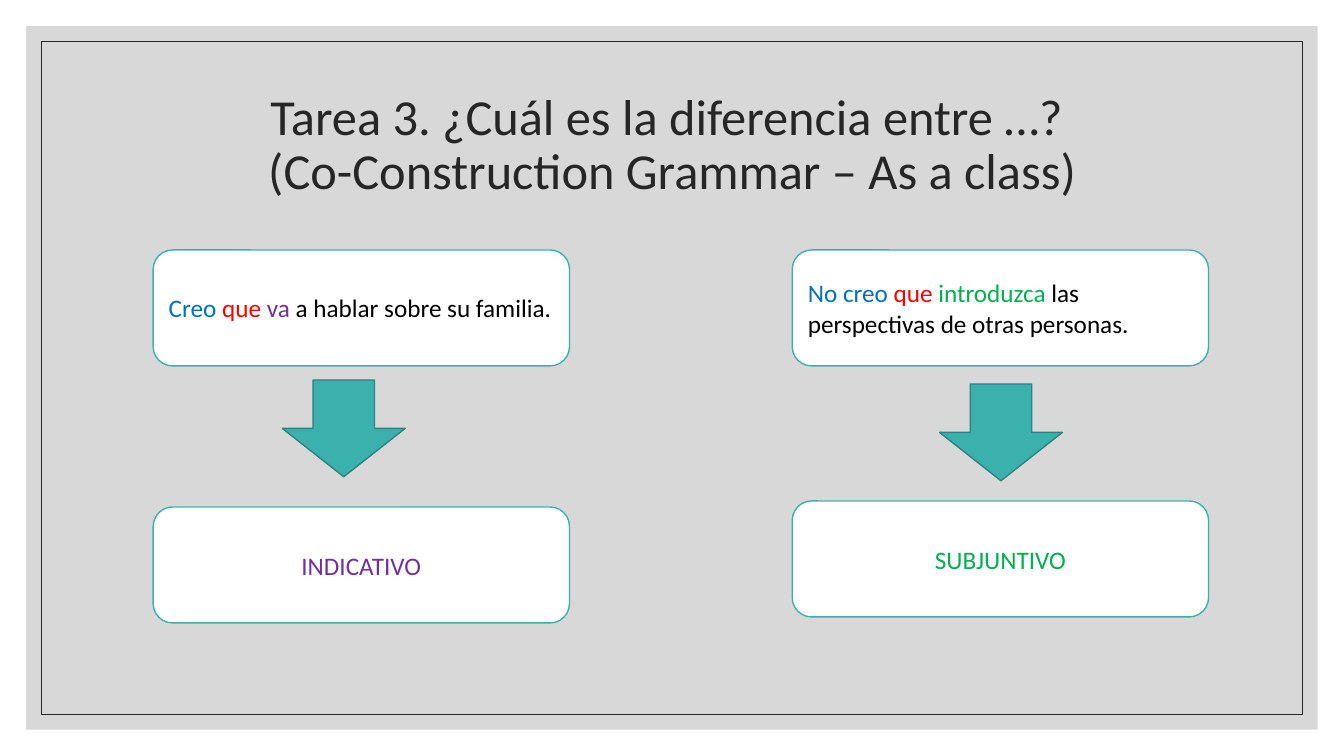
from lxml.etree import SubElement as Sub
from pptx import Presentation
from pptx.dml.color import RGBColor as Rgb
from pptx.enum.shapes import MSO_SHAPE as Kind
from pptx.enum.text import MSO_ANCHOR as Anchor, PP_ALIGN as Align
from pptx.oxml.ns import qn
from pptx.util import Inches, Pt

HUES = {
    "gray": "BFBFBF", "ink": "262626", "white": "FFFFFF", "black": "000000",
    "teal": "3BB1AE", "deep": "2C8381", "blue": "0070C0", "red": "FF0000",
    "plum": "7030A0", "green": "00B050",
}
CELL = 0.1  # inches per grid column and row
WIDE, HIGH = 133.33, 75


def hue(name):
    return Rgb.from_string(HUES[name])


class Page:
    """Holds the text style and the current slide; lengths are grid cells."""

    def __init__(self, deck, font="Calibri", size=18):
        self.slide = deck.slides.add_slide(deck.slide_layouts[6])
        self.font, self.size = font, size

    def area(self, *cells):
        return [Inches(cell * CELL) for cell in cells]

    def shape(self, kind, box, fill=None, line=None, width=1):
        item = self.slide.shapes.add_shape(kind, *self.area(*box))
        item.shadow.inherit = False
        if fill:
            item.fill.solid()
            item.fill.fore_color.rgb = hue(fill)
        else:
            item.fill.background()
        if line:
            item.line.color.rgb = hue(line)
            item.line.width = Pt(width)
        else:
            item.line.fill.background()
        return item

    def veil(self, box, fill, share):
        """Draw a borderless panel with the given percent of opacity."""
        item = self.shape(Kind.RECTANGLE, box, fill)
        tint = next(item.element.iter(qn("a:srgbClr")))
        Sub(tint, qn("a:alpha")).set("val", str(share * 1000))

    def label(self, item, lines, align, size=None):
        """Fill one paragraph with lines of (text, hue) runs."""
        frame = item.text_frame
        frame.word_wrap = True
        frame.vertical_anchor = Anchor.MIDDLE
        para = frame.paragraphs[0]
        para.alignment = align
        for row, runs in enumerate(lines):
            if row:
                para.add_line_break()
            for text, name in runs:
                run = para.add_run()
                run.text = text
                run.font.name = self.font
                run.font.size = Pt(size or self.size)
                run.font.color.rgb = hue(name)
        return para

    def title(self, box, lines):
        item = self.slide.shapes.add_textbox(*self.area(*box))
        runs = [[(line, "ink")] for line in lines]
        self.label(item, runs, Align.CENTER, 36).line_spacing = 0.9

    def card(self, left, top, runs, align):
        item = self.shape(Kind.ROUNDED_RECTANGLE, (left, top, 41.3, 11.5),
                          "white", "teal")
        self.label(item, [runs], align)

    def arrow(self, left, top):
        self.shape(Kind.DOWN_ARROW, (left, top, 12.2, 9.6), "teal", "deep")


def inset(gap):
    return gap, gap, WIDE - 2 * gap, HIGH - 2 * gap


def main():
    deck = Presentation()
    deck.slide_width, deck.slide_height = Inches(WIDE * CELL), Inches(HIGH * CELL)
    page = Page(deck)
    page.veil(inset(2.6), "gray", 60)
    page.shape(Kind.RECTANGLE, inset(4.1), line="ink", width=0.5)
    page.title((11.7, 7, 110, 15), [
        "Tarea 3. ¿Cuál es la diferencia entre …? ",
        "(Co-Construction Grammar – As a class)",
    ])

    # Card left, arrow left and top, mood top, sentence, mood
    moods = [
        (15.2, 28, 37.7, 50.3,
         [("Creo ", "blue"), ("que ", "red"), ("va", "plum"),
          (" a hablar sobre su familia.", "black")],
         ("INDICATIVO", "plum")),
        (78.6, 93.2, 38.1, 49.7,
         [("No creo ", "blue"), ("que ", "red"), ("introduzca", "green"),
          (" las perspectivas de otras personas.", "black")],
         ("SUBJUNTIVO", "green")),
    ]
    for left, tip, drop, base, phrase, mood in moods:
        page.card(left, 24.8, phrase, Align.LEFT)
        page.arrow(tip, drop)
        page.card(left, base, [mood], Align.CENTER)
    deck.save("out.pptx")


if __name__ == "__main__":
    main()
